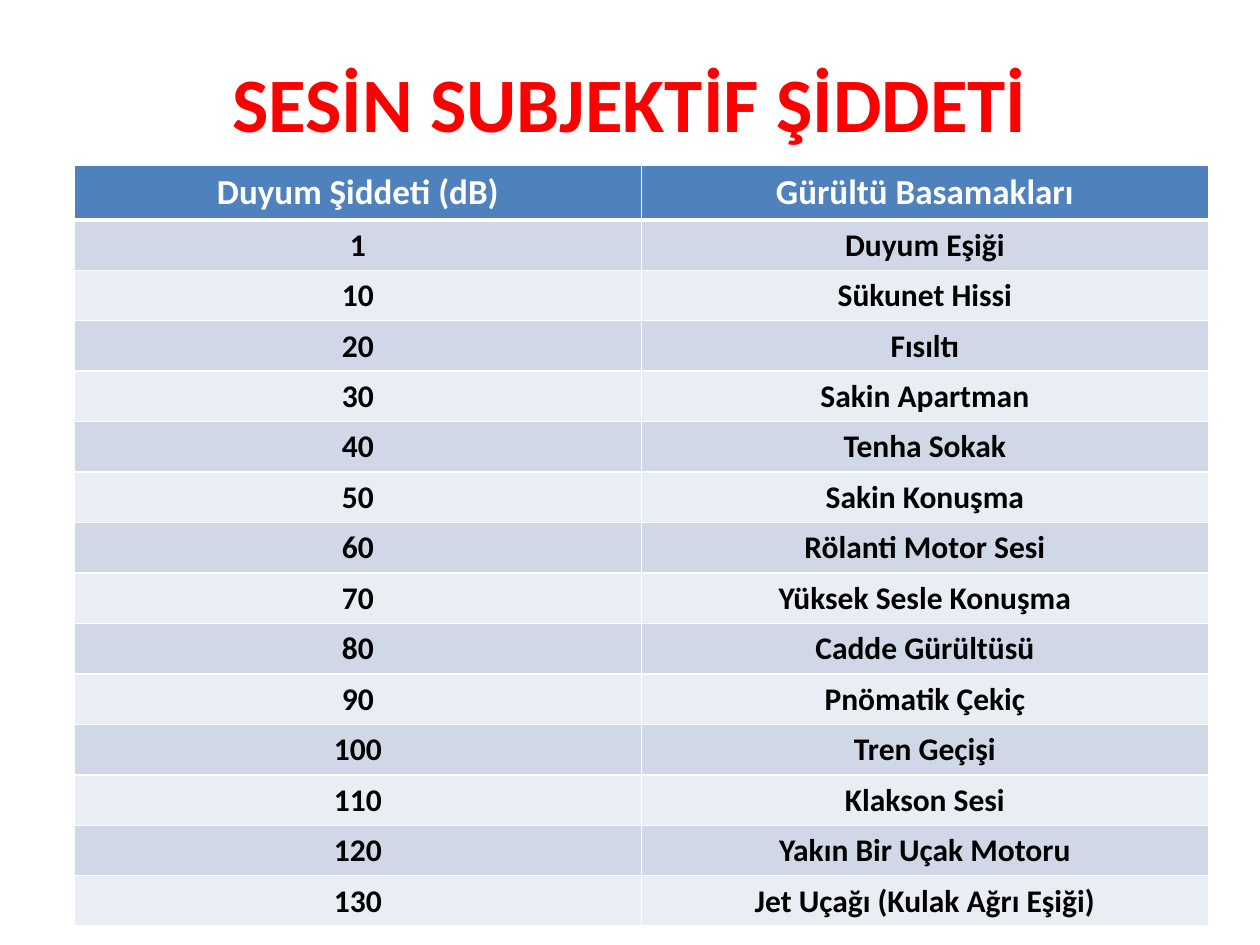
import lxml.etree
import pptx
import pptx.dml.color
import pptx.enum.text
import pptx.oxml.ns
import pptx.util
from pptx.util import Cm, Pt

RGBColor = pptx.dml.color.RGBColor
RED = RGBColor(0xFF, 0x00, 0x00)
WHITE = RGBColor(0xFF, 0xFF, 0xFF)
BLACK = RGBColor(0x00, 0x00, 0x00)
HEADER_BLUE = RGBColor(0x4F, 0x81, 0xBD)
BANDS = (RGBColor(0xE9, 0xED, 0xF4), RGBColor(0xD0, 0xD8, 0xE8))
FONT = "Calibri"

HEADER = ("Duyum Şiddeti (dB)", "Gürültü Basamakları")
LEVELS = [
    ("1", "Duyum Eşiği"),
    ("10", "Sükunet Hissi"),
    ("20", "Fısıltı"),
    ("30", "Sakin Apartman"),
    ("40", "Tenha Sokak"),
    ("50", "Sakin Konuşma"),
    ("60", "Rölanti Motor Sesi"),
    ("70", "Yüksek Sesle Konuşma"),
    ("80", "Cadde Gürültüsü"),
    ("90", "Pnömatik Çekiç"),
    ("100", "Tren Geçişi"),
    ("110", "Klakson Sesi"),
    ("120", "Yakın Bir Uçak Motoru"),
    ("130", "Jet Uçağı (Kulak Ağrı Eşiği)"),
]


def write_centred(tf, text, size, color):
    tf.text = text
    p = tf.paragraphs[0]
    p.alignment = pptx.enum.text.PP_ALIGN.CENTER
    font = p.runs[0].font
    font.name, font.size, font.bold = FONT, Pt(size), True
    font.color.rgb = color


def set_borders(cell, top, bottom):
    """Draw white cell borders; top and bottom are widths in points."""
    qn = pptx.oxml.ns.qn
    tcPr = cell._tc.get_or_add_tcPr()
    for side, width in (("L", 1), ("R", 1), ("T", top), ("B", bottom)):
        ln = lxml.etree.SubElement(tcPr, qn(f"a:ln{side}"), w=str(Pt(width)))
        fill = lxml.etree.SubElement(ln, qn("a:solidFill"))
        lxml.etree.SubElement(fill, qn("a:srgbClr"), val=str(WHITE))


def add_title(slide, left, top, width, height):
    tf = slide.shapes.add_textbox(left, top, width, height).text_frame
    tf.word_wrap = True
    tf.vertical_anchor = pptx.enum.text.MSO_ANCHOR.MIDDLE
    write_centred(tf, "SESİN SUBJEKTİF ŞİDDETİ", 44, RED)


def add_level_table(slide, left, top, width, height):
    rows = [HEADER] + LEVELS
    table = slide.shapes.add_table(
        len(rows), len(HEADER), left, top, width, height).table
    for i, row in enumerate(rows):
        is_header = i == 0
        for j, text in enumerate(row):
            cell = table.cell(i, j)
            set_borders(cell, 3 if i == 1 else 1, 3 if is_header else 1)
            cell.fill.solid()
            cell.fill.fore_color.rgb = HEADER_BLUE if is_header else BANDS[i % 2]
            write_centred(cell.text_frame, text, 20 if is_header else 18,
                          WHITE if is_header else BLACK)


def main():
    prs = pptx.Presentation()
    prs.slide_width, prs.slide_height = Cm(25.4), Cm(19.05)
    slide = prs.slides.add_slide(prs.slide_layouts[6])
    add_title(slide, Cm(1.27), Cm(0.76), Cm(22.86), Cm(2.57))
    add_level_table(slide, Cm(1.5), Cm(3.33), Cm(22.86), Cm(14.86))
    prs.save("out.pptx")


if __name__ == "__main__":
    main()
